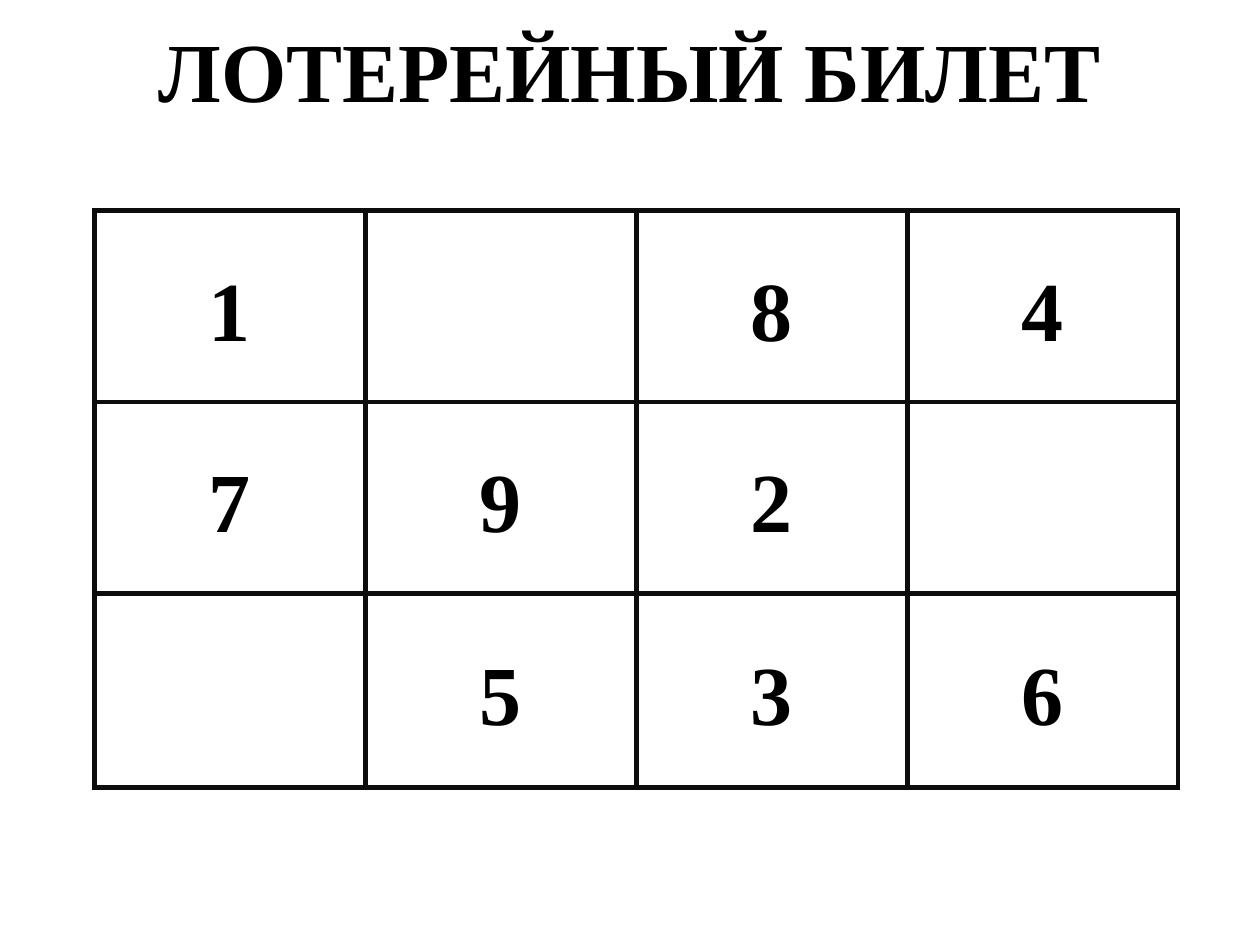
from dataclasses import dataclass

from lxml import etree
from pptx import Presentation
from pptx.dml.color import RGBColor
from pptx.enum.text import MSO_ANCHOR, PP_ALIGN
from pptx.oxml.ns import qn
from pptx.table import _Cell
from pptx.text.text import _Paragraph
from pptx.util import Inches, Pt

CENTER = PP_ALIGN.CENTER
MIDDLE = MSO_ANCHOR.MIDDLE
TITLE_ONLY = 5
FONT = "Times New Roman"
INK = "000000"
GRID_INK = "0D0D0D"
GRID_WIDTH = Pt(3)


@dataclass
class Ticket:
    left: float
    top: float
    column_width: float
    row_heights: list[float]
    numbers: list[list[str]]


TICKET = Ticket(
    left=0.75,
    top=1.67,
    column_width=2.15,
    row_heights=[1.52, 1.52, 1.54],
    numbers=[
        ["1", "", "8", "4"],
        ["7", "9", "2", ""],
        ["", "5", "3", "6"],
    ],
)


def color(value: str) -> RGBColor:
    return RGBColor.from_string(value)


def add_bold_run(paragraph: _Paragraph, text: str) -> None:
    paragraph.alignment = CENTER
    run = paragraph.add_run()
    run.text = text
    run.font.name = FONT
    run.font.size = Pt(48)
    run.font.bold = True
    run.font.color.rgb = color(INK)


def add_borders(cell: _Cell) -> None:
    properties = cell._tc.get_or_add_tcPr()
    for side in ("a:lnL", "a:lnR", "a:lnT", "a:lnB"):
        border = etree.SubElement(properties, qn(side), w=str(GRID_WIDTH))
        fill = etree.SubElement(border, qn("a:solidFill"))
        etree.SubElement(fill, qn("a:srgbClr"), val=GRID_INK)


def fill_cell(cell: _Cell, number: str) -> None:
    add_borders(cell)
    cell.fill.background()
    cell.vertical_anchor = MIDDLE
    cell.margin_left = cell.margin_right = Inches(0.04)
    cell.margin_top = cell.margin_bottom = 0
    if number:
        paragraph = cell.text_frame.paragraphs[0]
        paragraph.line_spacing = 1.15
        add_bold_run(paragraph, number)


def add_ticket(slide, ticket: Ticket) -> None:
    row_count, column_count = len(ticket.numbers), len(ticket.numbers[0])
    grid = slide.shapes.add_table(
        row_count, column_count,
        Inches(ticket.left), Inches(ticket.top),
        Inches(ticket.column_width * column_count),
        Inches(sum(ticket.row_heights)),
    ).table
    grid.first_row = False
    grid.horz_banding = False
    for column in grid.columns:
        column.width = Inches(ticket.column_width)
    for row, height, numbers in zip(grid.rows, ticket.row_heights, ticket.numbers):
        row.height = Inches(height)
        for cell, number in zip(row.cells, numbers):
            fill_cell(cell, number)


def add_heading(slide, text: str) -> None:
    heading = slide.shapes.title
    heading.left, heading.top = Inches(0), Inches(0.09)
    heading.width, heading.height = Inches(10), Inches(0.91)
    heading.text_frame.vertical_anchor = MIDDLE
    add_bold_run(heading.text_frame.paragraphs[0], text)


def main() -> None:
    presentation = Presentation()
    presentation.slide_width = Inches(10)
    presentation.slide_height = Inches(7.5)
    slide = presentation.slides.add_slide(presentation.slide_layouts[TITLE_ONLY])

    # Grid of ticket numbers
    add_ticket(slide, TICKET)

    # Heading above the grid
    add_heading(slide, "ЛОТЕРЕЙНЫЙ БИЛЕТ")

    presentation.save("out.pptx")


if __name__ == "__main__":
    main()
